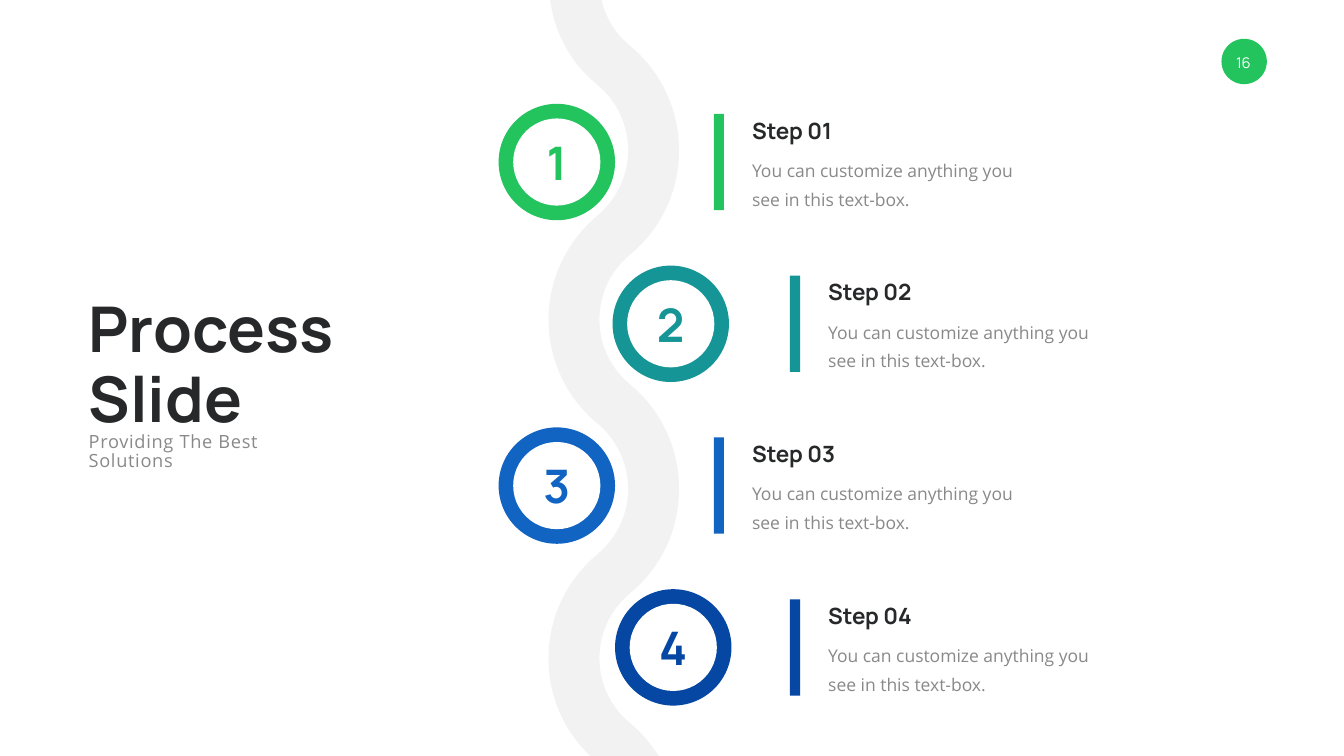
from pptx import Presentation
from pptx.dml.color import RGBColor
from pptx.enum.shapes import MSO_SHAPE
from pptx.enum.text import MSO_ANCHOR, PP_ALIGN
from pptx.util import Inches, Pt

OVAL, RECT = MSO_SHAPE.OVAL, MSO_SHAPE.RECTANGLE
TOP, MID, LOW = MSO_ANCHOR.TOP, MSO_ANCHOR.MIDDLE, MSO_ANCHOR.BOTTOM
LEFT, MIDDLE = PP_ALIGN.LEFT, PP_ALIGN.CENTER

WHITE = RGBColor(0xFF, 0xFF, 0xFF)
PALE = RGBColor(0xF2, 0xF2, 0xF2)
DARK = RGBColor(0x27, 0x28, 0x29)
GRAY = RGBColor(0x89, 0x89, 0x89)
GREEN = RGBColor(0x23, 0xC3, 0x5E)
TEAL = RGBColor(0x15, 0x95, 0x96)
BLUE = RGBColor(0x12, 0x64, 0xC3)
NAVY = RGBColor(0x05, 0x47, 0xA3)

# Text formats: font values by role
FORMATS = {
    "title": {"name": "Manrope", "size": Pt(90), "bold": True},
    "number": {"name": "Manrope", "size": Pt(66), "bold": True},
    "step": {"name": "Manrope", "size": Pt(32), "bold": True},
    "page": {"name": "Manrope", "size": Pt(21)},
    "body": {"name": "Open Sans", "size": Pt(25)},
    "tagline": {"name": "Open Sans", "size": Pt(26)},
}

# Ring left, bar left, colour
STEPS = [
    (9.89, 14.16, GREEN),
    (12.15, 15.67, TEAL),
    (9.89, 14.16, BLUE),
    (12.2, 15.67, NAVY),
]
FIRST, PITCH = 2.06, 3.21
RING, RIM = 2.31, 0.29
BODY = "You can customize anything you see in this text-box."

# Ribbon edges: a point is a straight line, three points are a curve
RIBBON = [
    [(10.91, 0)], [(11.93, 0)], [(11.98, 0.17)],
    [(12.08, 0.46), (12.26, 0.72), (12.5, 0.91)],
    [(13.12, 1.43), (13.47, 2.18), (13.47, 2.98)],
    [(13.47, 3.79), (13.12, 4.54), (12.5, 5.05)],
    [(12.11, 5.37), (11.89, 5.84), (11.89, 6.34)],
    [(11.89, 6.84), (12.11, 7.31), (12.5, 7.63)],
    [(13.12, 8.14), (13.47, 8.9), (13.47, 9.7)],
    [(13.47, 10.51), (13.12, 11.26), (12.5, 11.77)],
    [(12.11, 12.09), (11.89, 12.56), (11.89, 13.06)],
    [(11.89, 13.56), (12.11, 14.03), (12.5, 14.35)],
    [(12.65, 14.48), (12.79, 14.62), (12.91, 14.78)],
    [(13.07, 15)], [(11.71, 15)], [(11.64, 14.93)],
    [(11.15, 14.43), (10.88, 13.77), (10.88, 13.06)],
    [(10.88, 12.26), (11.24, 11.5), (11.86, 10.99)],
    [(12.24, 10.67), (12.46, 10.2), (12.46, 9.7)],
    [(12.46, 9.2), (12.24, 8.73), (11.86, 8.41)],
    [(11.24, 7.9), (10.88, 7.15), (10.88, 6.34)],
    [(10.88, 5.54), (11.24, 4.79), (11.86, 4.27)],
    [(12.24, 3.95), (12.46, 3.48), (12.46, 2.98)],
    [(12.46, 2.48), (12.24, 2.01), (11.86, 1.69)],
    [(11.39, 1.31), (11.07, 0.79), (10.95, 0.21)],
]


def paint(shape, color):
    shape.shadow.inherit = False
    shape.fill.solid()
    shape.fill.fore_color.rgb = color
    shape.line.fill.background()


def block(slide, kind, box, color):
    shape = slide.shapes.add_shape(kind, *map(Inches, box))
    paint(shape, color)


def write(slide, box, lines, role, color, align=LEFT, anchor=TOP,
          wrap=False, space=None):
    shape = slide.shapes.add_textbox(*map(Inches, box))
    frame = shape.text_frame
    frame.word_wrap = wrap
    frame.vertical_anchor = anchor
    frame.text = lines
    for para in frame.paragraphs:
        para.alignment = align
        para.line_spacing = space
        for run in para.runs:
            for key, value in FORMATS[role].items():
                setattr(run.font, key, value)
            run.font.color.rgb = color
    return frame


def curve(start, bends, count=16):
    """Points along a cubic curve, after its start."""
    for i in range(1, count + 1):
        t = i / count
        u = 1 - t
        mix = (u ** 3, 3 * u * u * t, 3 * u * t * t, t ** 3)
        yield tuple(sum(m * p[axis] for m, p in zip(mix, (start, *bends)))
                    for axis in (0, 1))


def ribbon(slide, left, top):
    """Winding road; left and top shift it from its usual place."""
    points = []
    for part in RIBBON:
        points += part if len(part) == 1 else curve(points[-1], part)
    spots = [(Inches(left + x), Inches(top + y)) for x, y in points]
    pen = slide.shapes.build_freeform(*spots[0])
    pen.add_line_segments(spots[1:], close=True)
    paint(pen.convert_to_shape(), PALE)


def badge(slide, left, top, size):
    block(slide, OVAL, (left, top, size, size), GREEN)
    write(slide, (left + 0.04, top + 0.17, 0.79, 0.61), "16", "page", WHITE,
          MIDDLE, MID)


def heading(slide, left, top, width):
    write(slide, (left, top, width, 2.93), "Process\nSlide", "title", DARK,
          anchor=LOW, space=Pt(100))
    frame = write(slide, (left, top + 2.94, width, 0.54),
                  "Providing The Best Solutions", "tagline", GRAY,
                  anchor=MID, wrap=True, space=0.9)
    # Letter spacing of one point
    for run in frame.paragraphs[0].runs:
        run.font._element.set("spc", "100")


def ring(slide, left, top, size, label, color):
    hole = size - 2 * RIM
    block(slide, OVAL, (left, top, size, size), color)
    block(slide, OVAL, (left + RIM, top + RIM, hole, hole), WHITE)
    write(slide, (left + (size - 0.88) / 2, top + 0.45, 0.88, 1.4), label,
          "number", color, MIDDLE, MID)


def step(slide, left, top, label, color):
    block(slide, RECT, (left, top, 0.2, 1.91), color)
    write(slide, (left + 0.66, top, 1.9, 0.64), label, "step", DARK,
          anchor=LOW)
    write(slide, (left + 0.66, top + 0.71, 5.89, 1.2), BODY, "body", GRAY,
          wrap=True, space=Pt(41))


def main():
    deck = Presentation()
    deck.slide_width, deck.slide_height = Inches(26.66), Inches(15)
    slide = deck.slides.add_slide(deck.slide_layouts[6])

    badge(slide, 24.23, 0.77, 0.9)
    ribbon(slide, 0, 0)
    for i, (left, bar, color) in enumerate(STEPS):
        top = FIRST + i * PITCH
        ring(slide, left, top, RING, str(i + 1), color)
        step(slide, bar, top + 0.2, f"Step {i + 1:02}", color)
    heading(slide, 1.66, 5.76, 5.2)

    deck.save("out.pptx")


if __name__ == "__main__":
    main()
